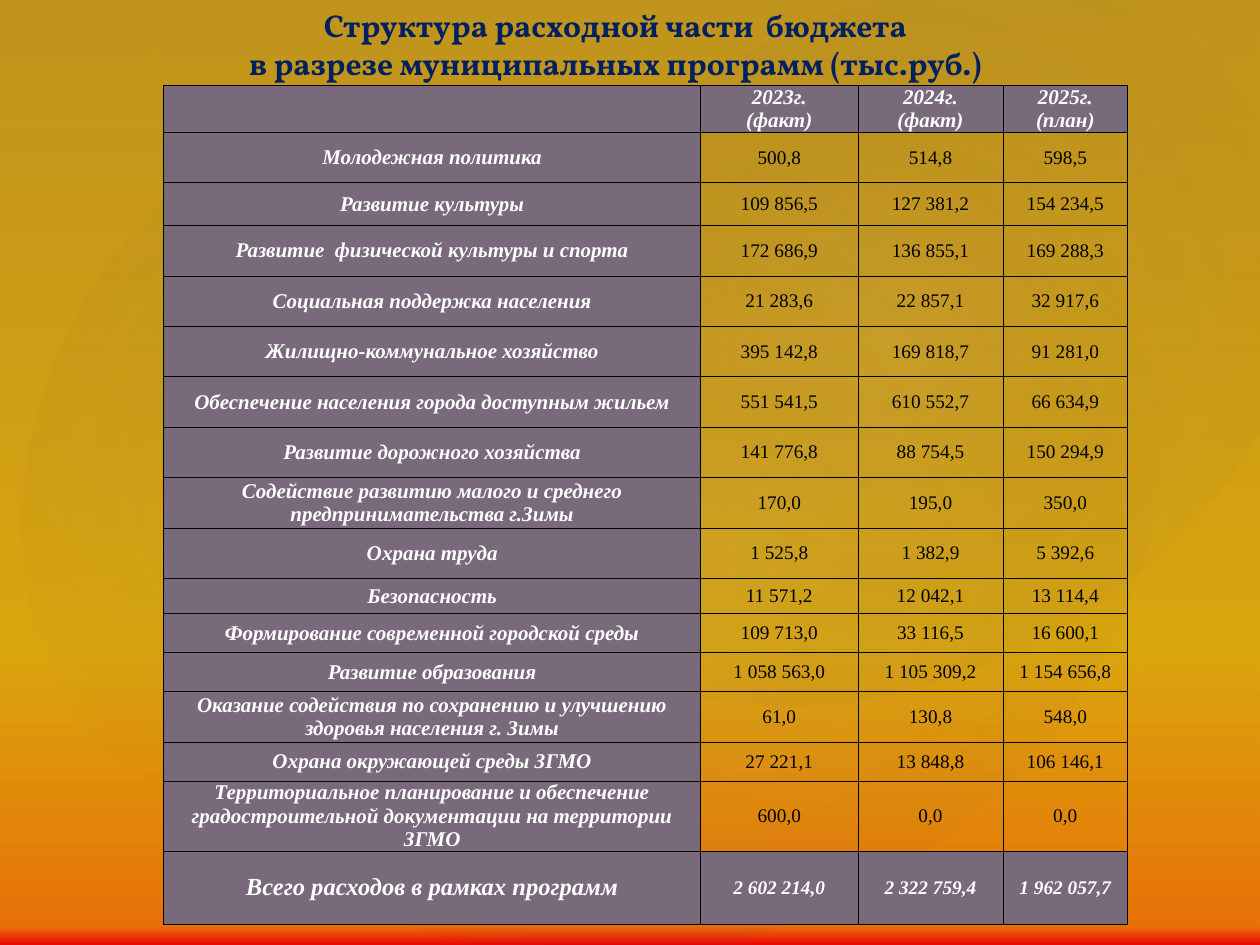
from lxml import etree
from pptx import Presentation
from pptx.dml.color import RGBColor
from pptx.enum.shapes import MSO_SHAPE
from pptx.enum.text import MSO_ANCHOR, PP_ALIGN
from pptx.oxml import parse_xml
from pptx.oxml.ns import nsdecls, qn
from pptx.util import Inches, Pt

COLORS = {
    "gold": "FFC000", "orange": "FF7A00", "red": "FF0300", "maroon": "4D0808",
    "plum": "504652", "night": "242852", "mist": "C4BCC6",
    "mauve": "78697B", "navy": "002060", "white": "FFFFFF", "black": "000000",
}
BODY_FONT = "Times New Roman"
TITLE_FONT = "Vollkorn"
TITLE = ["Структура расходной части  бюджета", "в разрезе муниципальных программ (тыс.руб.)"]
HEADER = ["", "2023г.\n(факт)", "2024г.\n(факт)", "2025г.\n(план)"]
PROGRAMS = [
    ["Молодежная политика", "500,8", "514,8", "598,5"],
    ["Развитие культуры", "109 856,5", "127 381,2", "154 234,5"],
    ["Развитие  физической культуры и спорта", "172 686,9", "136 855,1", "169 288,3"],
    ["Социальная поддержка населения", "21 283,6", "22 857,1", "32 917,6"],
    ["Жилищно-коммунальное хозяйство", "395 142,8", "169 818,7", "91 281,0"],
    ["Обеспечение населения города доступным жильем", "551 541,5", "610 552,7", "66 634,9"],
    ["Развитие дорожного хозяйства", "141 776,8", "88 754,5", "150 294,9"],
    ["Содействие развитию малого и среднего предпринимательства г.Зимы",
     "170,0", "195,0", "350,0"],
    ["Охрана труда", "1 525,8", "1 382,9", "5 392,6"],
    ["Безопасность", "11 571,2", "12 042,1", "13 114,4"],
    ["Формирование современной городской среды", "109 713,0", "33 116,5", "16 600,1"],
    ["Развитие образования", "1 058 563,0", "1 105 309,2", "1 154 656,8"],
    ["Оказание содействия по сохранению и улучшению здоровья населения г. Зимы",
     "61,0", "130,8", "548,0"],
    ["Охрана окружающей среды ЗГМО", "27 221,1", "13 848,8", "106 146,1"],
    ["Территориальное планирование и обеспечение градостроительной документации "
     "на территории ЗГМО", "600,0", "0,0", "0,0"],
]
TOTAL = ["Всего расходов в рамках программ", "2 602 214,0", "2 322 759,4", "1 962 057,7"]
COLUMN_WIDTHS = [4.26, 1.25, 1.15, 0.99]
ROW_HEIGHTS = [0.34, 0.4, 0.34] + [0.4] * 7 + [0.28, 0.31, 0.31, 0.4, 0.31, 0.52, 0.58]
GLOWS = [
    ((1.5, 1.14, 7.92, 6.24), 328.7, 7),
    ((-0.3, 1.28, 6.06, 4.9), 294.3, 8),
    ((3.58, 0.13, 7.09, 5.2), 328.7, 8),
]


def set_gradient(fill, stops, radial=False):
    fill.gradient()
    grad = fill._fill._gradFill
    for child in list(grad):
        grad.remove(child)
    stop_list = etree.SubElement(grad, qn("a:gsLst"))
    for position, color, alpha in stops:
        stop = etree.SubElement(stop_list, qn("a:gs"), pos=str(position * 1000))
        tint = etree.SubElement(stop, qn("a:srgbClr"), val=COLORS[color])
        etree.SubElement(tint, qn("a:alpha"), val=str(alpha * 1000))
    if radial:
        focus = etree.SubElement(grad, qn("a:path"), path="circle")
        etree.SubElement(focus, qn("a:fillToRect"), l="50000", t="50000", r="50000", b="50000")
    else:
        etree.SubElement(grad, qn("a:lin"), ang="5400000", scaled="0")


def add_glass(page, kind, box, stops, rotation=0, radial=False):
    shape = page.shapes.add_shape(kind, *map(Inches, box))
    shape.shadow.inherit = False
    shape.line.fill.background()
    shape.rotation = rotation
    set_gradient(shape.fill, stops, radial)


def add_backdrop(page, box):
    set_gradient(page.background.fill, [
        (68, "gold", 100), (98, "orange", 100), (100, "red", 100), (100, "maroon", 100)])
    add_glass(page, MSO_SHAPE.RECTANGLE, box, [(0, "plum", 36), (100, "night", 10)])
    for glow_box, rotation, alpha in GLOWS:
        add_glass(page, MSO_SHAPE.OVAL, glow_box,
                  [(0, "mist", alpha), (58, "night", 0)], rotation, True)


def write_lines(frame, lines, font, size, color, bold, italic=False):
    for index, line in enumerate(lines):
        para = frame.add_paragraph() if index else frame.paragraphs[0]
        para.alignment = PP_ALIGN.CENTER
        span = para.add_run()
        span.text = line
        span.font.name = font
        span.font.size = Pt(size)
        span.font.bold = bold
        span.font.italic = italic
        span.font.color.rgb = RGBColor.from_string(COLORS[color])


def add_borders(cell):
    properties = cell._tc.get_or_add_tcPr()
    for index, side in enumerate(["lnL", "lnR", "lnT", "lnB"]):
        properties.insert(index, parse_xml(
            f'<a:{side} {nsdecls("a")} w="6350"><a:solidFill>'
            f'<a:srgbClr val="{COLORS["black"]}"/></a:solidFill></a:{side}>'))


def fill_cell(cell, text, size, strong):
    cell.margin_left = cell.margin_right = cell.margin_top = cell.margin_bottom = 0
    cell.vertical_anchor = MSO_ANCHOR.MIDDLE
    if strong:
        cell.fill.solid()
        cell.fill.fore_color.rgb = RGBColor.from_string(COLORS["mauve"])
    else:
        cell.fill.background()
    if text:
        write_lines(cell.text_frame, text.split("\n"), BODY_FONT, size,
                    "white" if strong else "black", strong, strong)
    add_borders(cell)


def add_budget_table(page, box):
    rows = [HEADER, *PROGRAMS, TOTAL]
    last = len(rows) - 1
    table = page.shapes.add_table(len(rows), len(HEADER), *map(Inches, box)).table
    for column, width in zip(table.columns, COLUMN_WIDTHS):
        column.width = Inches(width)
    for row, height in zip(table.rows, ROW_HEIGHTS):
        row.height = Inches(height)
    for r, values in enumerate(rows):
        for c, text in enumerate(values):
            if c == 0:
                size = 14 if r == last else 12
            else:
                size = 12 if r == 0 else 11
            fill_cell(table.cell(r, c), text, size, c == 0 or r in (0, last))


def add_title(page, box):
    frame = page.shapes.add_textbox(*map(Inches, box)).text_frame
    frame.word_wrap = True
    write_lines(frame, TITLE, TITLE_FONT, 18, "navy", True)


def main():
    deck = Presentation()
    deck.slide_width = Inches(10)
    deck.slide_height = Inches(7.5)
    page = deck.slides.add_slide(deck.slide_layouts[6])
    add_backdrop(page, (0, 0, 10, 7.5))
    add_budget_table(page, (1.3, 0.68, 7.64, 6.75))
    add_title(page, (-0.35, 0, 10.47, 0.52))
    deck.save("out.pptx")


if __name__ == "__main__":
    main()
